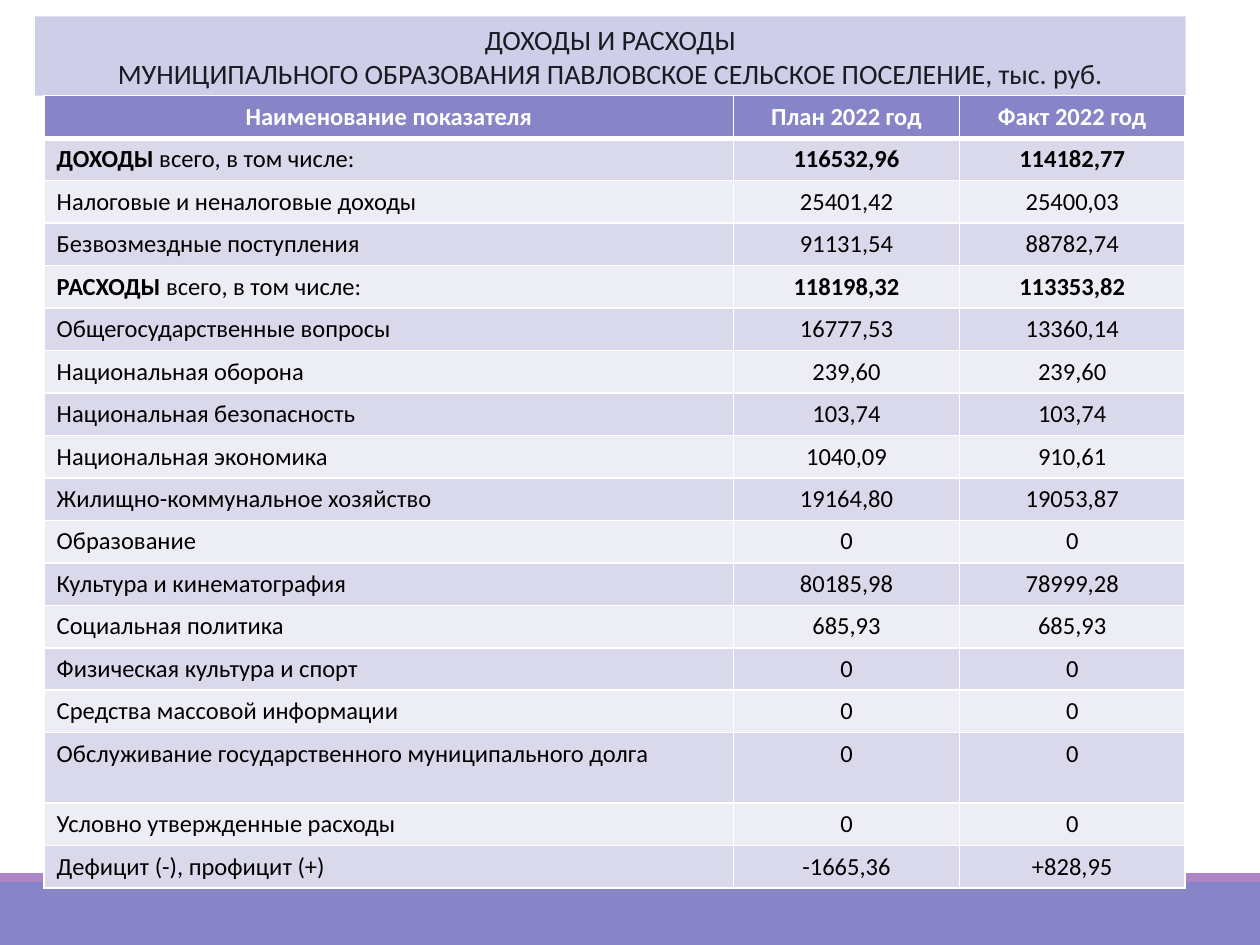
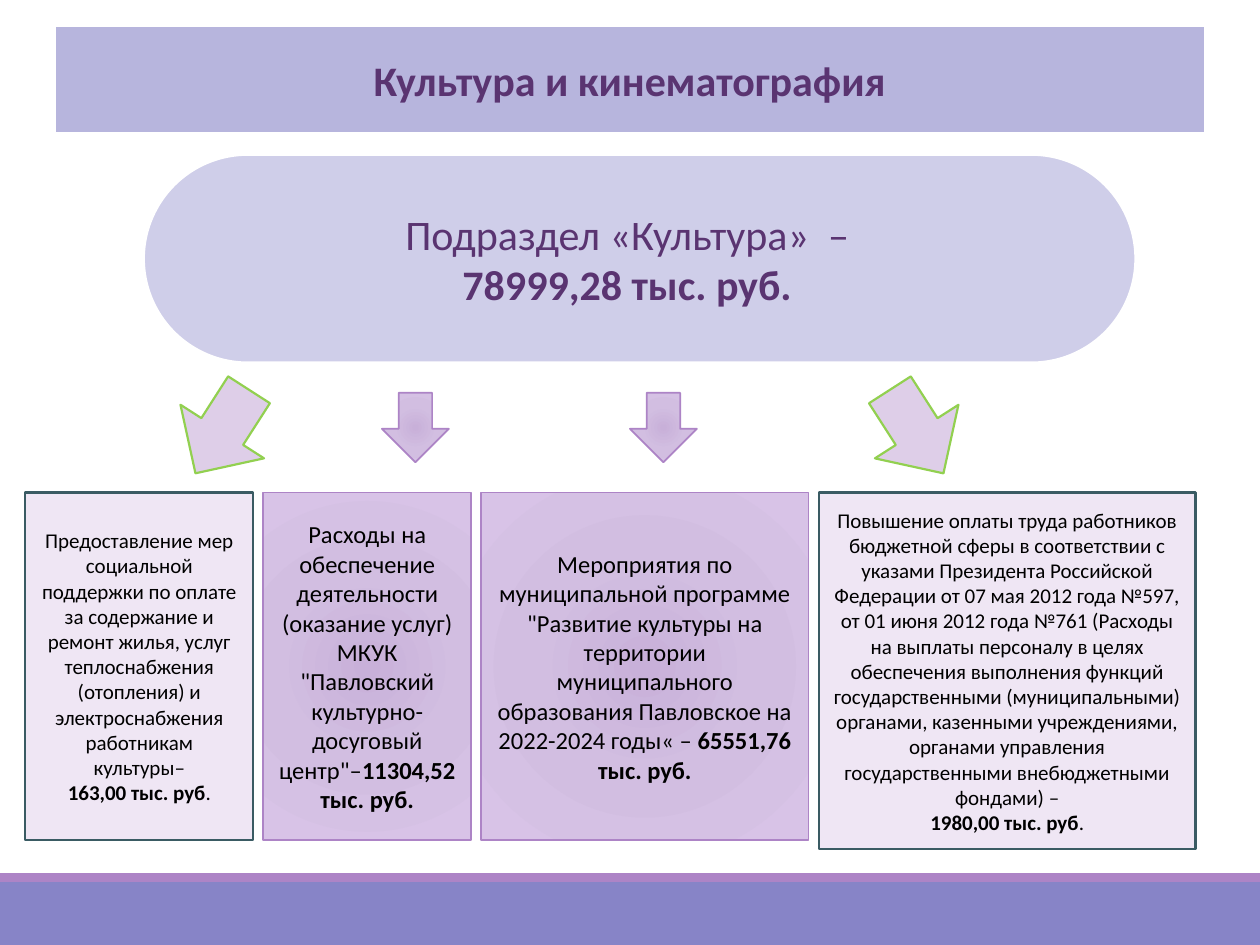
from pptx import Presentation
from pptx.dml.color import RGBColor
from pptx.enum.shapes import MSO_SHAPE as Preset
from pptx.enum.text import MSO_ANCHOR as Anchor, MSO_AUTO_SIZE as AutoSize, PP_ALIGN as Align
from pptx.oxml import parse_xml
from pptx.oxml.ns import nsdecls
from pptx.util import Cm, Pt

FONT = "Calibri"
WHITE = RGBColor(0xFF, 0xFF, 0xFF)
BLACK = RGBColor(0x00, 0x00, 0x00)
INK = RGBColor(0x1B, 0x1A, 0x22)
PLUM = RGBColor(0x5A, 0x34, 0x71)
VIOLET = RGBColor(0x87, 0x84, 0xC7)
ORCHID = RGBColor(0xAD, 0x84, 0xC6)
LAVENDER = RGBColor(0xB7, 0xB5, 0xDD)
PALE_LAVENDER = RGBColor(0xCF, 0xCE, 0xE9)
ROW_DARK = RGBColor(0xD9, 0xD9, 0xEB)
ROW_LIGHT = RGBColor(0xED, 0xED, 0xF5)
ARROW_FILL = RGBColor(0xDE, 0xCE, 0xE8)
GREEN = RGBColor(0x92, 0xD0, 0x50)
BOX_FILL = RGBColor(0xEF, 0xE6, 0xF4)
TEAL = RGBColor(0x3A, 0x5B, 0x63)
GLOW = [
    (0, RGBColor(0xC8, 0xB0, 0xD9)),
    (45, RGBColor(0xD2, 0xBE, 0xE1)),
    (100, RGBColor(0xD8, 0xC3, 0xE7)),
]


def paint(shape, fill, line=None, width=1.25):
    if fill is GLOW:
        stops = "".join(
            f'<a:gs pos="{place * 1000}"><a:srgbClr val="{color}"/></a:gs>' for place, color in GLOW
        )
        shape._element.spPr.insert(2, parse_xml(
            f'<a:gradFill {nsdecls("a")}><a:gsLst>{stops}</a:gsLst><a:path path="circle">'
            '<a:fillToRect l="100000" t="100000" r="100000" b="100000"/></a:path></a:gradFill>'
        ))
    else:
        shape.fill.solid()
        shape.fill.fore_color.rgb = fill
    if line is None:
        shape.line.fill.background()
    else:
        shape.line.color.rgb = line
        shape.line.width = Pt(width)
    if not shape.is_placeholder:
        shape.shadow.inherit = False


def write(frame, lines, size, color, align=Align.CENTER):
    frame.word_wrap = True
    for number, line in enumerate(lines):
        para = frame.add_paragraph() if number else frame.paragraphs[0]
        para.alignment = align
        para.font.name = FONT
        para.font.size = Pt(size)
        para.font.color.rgb = color
        for part, text in enumerate(line.split("*")):
            if text:
                span = para.add_run()
                span.text = text
                if part % 2:
                    span.font.bold = True


deck = Presentation()
deck.slide_width = Cm(25.4)
deck.slide_height = Cm(19.05)
title_only = deck.slide_layouts[5]
budget_page = deck.slides.add_slide(title_only)
culture_page = deck.slides.add_slide(title_only)

master_tree = deck.slide_master.shapes._spTree
for number, (top, height, color) in enumerate([(17.78, 1.27, VIOLET), (17.6, 0.18, ORCHID)]):
    band = budget_page.shapes.add_shape(Preset.RECTANGLE, 0, Cm(top), deck.slide_width, Cm(height))
    paint(band, color)
    master_tree.insert(2 + number, band._element)

titles = [
    (budget_page, (0.71, 0.33, 23.19, 1.6), 16667, PALE_LAVENDER, None, 16, INK,
     ["ДОХОДЫ И РАСХОДЫ",
      "МУНИЦИПАЛЬНОГО ОБРАЗОВАНИЯ ПАВЛОВСКОЕ СЕЛЬСКОЕ ПОСЕЛЕНИЕ, тыс. руб."]),
    (culture_page, (1.1, 0.53, 23.19, 2.16), 50000, LAVENDER, WHITE, 24, PLUM,
     ["*Культура и кинематография*"]),
]
for page, place, rounding, fill, line, size, color, lines in titles:
    title = page.shapes.title
    title.left, title.top, title.width, title.height = [Cm(value) for value in place]
    title._element.spPr.insert(1, parse_xml(
        f'<a:prstGeom {nsdecls("a")} prst="roundRect"><a:avLst>'
        f'<a:gd name="adj" fmla="val {rounding}"/></a:avLst></a:prstGeom>'
    ))
    paint(title, fill, line)
    title.text_frame.auto_size = AutoSize.NONE
    title.text_frame.vertical_anchor = Anchor.MIDDLE
    write(title.text_frame, lines, size, color)

budget_rows = [
    ("*Наименование показателя*", "*План 2022 год*", "*Факт 2022 год*"),
    ("*ДОХОДЫ* всего, в том числе:", "*116532,96*", "*114182,77*"),
    ("Налоговые и неналоговые доходы", "25401,42", "25400,03"),
    ("Безвозмездные поступления", "91131,54", "88782,74"),
    ("*РАСХОДЫ* всего, в том числе:", "*118198,32*", "*113353,82*"),
    ("Общегосударственные вопросы", "16777,53", "13360,14"),
    ("Национальная оборона", "239,60", "239,60"),
    ("Национальная безопасность", "103,74", "103,74"),
    ("Национальная экономика", "1040,09", "910,61"),
    ("Жилищно-коммунальное хозяйство", "19164,80", "19053,87"),
    ("Образование", "0", "0"),
    ("Культура и кинематография", "80185,98", "78999,28"),
    ("Социальная политика", "685,93", "685,93"),
    ("Физическая культура и спорт", "0", "0"),
    ("Средства массовой информации", "0", "0"),
    ("Обслуживание государственного муниципального долга", "0", "0"),
    ("Условно утвержденные расходы", "0", "0"),
    ("Дефицит (-), профицит (+)", "-1665,36", "+828,95"),
]
DEBT_ROW = 15
table = budget_page.shapes.add_table(
    len(budget_rows), 3, Cm(0.89), Cm(1.93), Cm(23), Cm(15.82)
).table
for column, width in zip(table.columns, (13.9, 4.55, 4.55)):
    column.width = Cm(width)
for row, texts in enumerate(budget_rows):
    table.rows[row].height = Cm(1.42 if row == DEBT_ROW else 0.85)
    for column, text in enumerate(texts):
        cell = table.cell(row, column)
        align = Align.LEFT if row and column == 0 else Align.CENTER
        write(cell.text_frame, [text], 14, BLACK if row else WHITE, align)
        for side in ("lnL", "lnR", "lnT", "lnB"):
            heavy = (row == 0 and side == "lnB") or (row == 1 and side == "lnT")
            cell._tc.get_or_add_tcPr().append(parse_xml(
                f'<a:{side} {nsdecls("a")} w="{Pt(3 if heavy else 1)}"><a:solidFill>'
                f'<a:srgbClr val="{WHITE}"/></a:solidFill></a:{side}>'
            ))
        cell.fill.solid()
        cell.fill.fore_color.rgb = VIOLET if row == 0 else ROW_DARK if row % 2 else ROW_LIGHT

subsection = culture_page.shapes.add_shape(
    Preset.ROUNDED_RECTANGLE, Cm(2.9), Cm(3.12), Cm(19.99), Cm(4.19)
)
subsection.adjustments[0] = 0.5
paint(subsection, PALE_LAVENDER, WHITE)
subsection.text_frame.margin_right = Cm(0.75)
write(subsection.text_frame, ["Подраздел «Культура»  –", "*78999,28 тыс. руб.*"], 24, PLUM)

arrows = [
    (3.48, 7.7, 2, 2, 32.7, ARROW_FILL, GREEN, 1.25),
    (17.48, 7.7, 2, 2, 327.3, ARROW_FILL, GREEN, 1.25),
    (7.7, 7.92, 1.35, 1.4, 0, GLOW, ORCHID, 1),
    (12.7, 7.92, 1.35, 1.4, 0, GLOW, ORCHID, 1),
]
for left, top, width, height, rotation, fill, line, weight in arrows:
    arrow = culture_page.shapes.add_shape(
        Preset.DOWN_ARROW, Cm(left), Cm(top), Cm(width), Cm(height)
    )
    arrow.rotation = rotation
    paint(arrow, fill, line, weight)

expenses = [
    (0.51, 4.6, 7.01, BOX_FILL, TEAL, 1.25, 12,
     ["Предоставление мер социальной поддержки по оплате за содержание и ремонт жилья, "
      "услуг теплоснабжения (отопления) и электроснабжения работникам культуры–",
      "*163,00 тыс. руб*."]),
    (5.31, 4.19, 7.01, GLOW, ORCHID, 1, 14,
     ['Расходы на обеспечение деятельности (оказание услуг) МКУК "Павловский '
      'культурно-досуговый центр"–*11304,52 тыс. руб.*']),
    (9.7, 6.6, 7.01, GLOW, ORCHID, 1, 14,
     ['Мероприятия по муниципальной программе "Развитие культуры на территории '
      'муниципального образования Павловское на 2022-2024 годы« – *65551,76 тыс. руб.*']),
    (16.51, 7.59, 7.19, BOX_FILL, TEAL, 1.25, 12,
     ["Повышение оплаты труда работников бюджетной сферы в соответствии с указами "
      "Президента Российской Федерации от 07 мая 2012 года №597, от 01 июня 2012 года №761 "
      "(Расходы на выплаты персоналу в целях обеспечения выполнения функций государственными "
      "(муниципальными) органами, казенными учреждениями, органами управления "
      "государственными внебюджетными фондами) –",
      "*1980,00 тыс. руб*."]),
]
for left, width, height, fill, line, weight, size, lines in expenses:
    box = culture_page.shapes.add_shape(
        Preset.RECTANGLE, Cm(left), Cm(9.93), Cm(width), Cm(height)
    )
    paint(box, fill, line, weight)
    write(box.text_frame, lines, size, BLACK)

deck.save("out.pptx")
